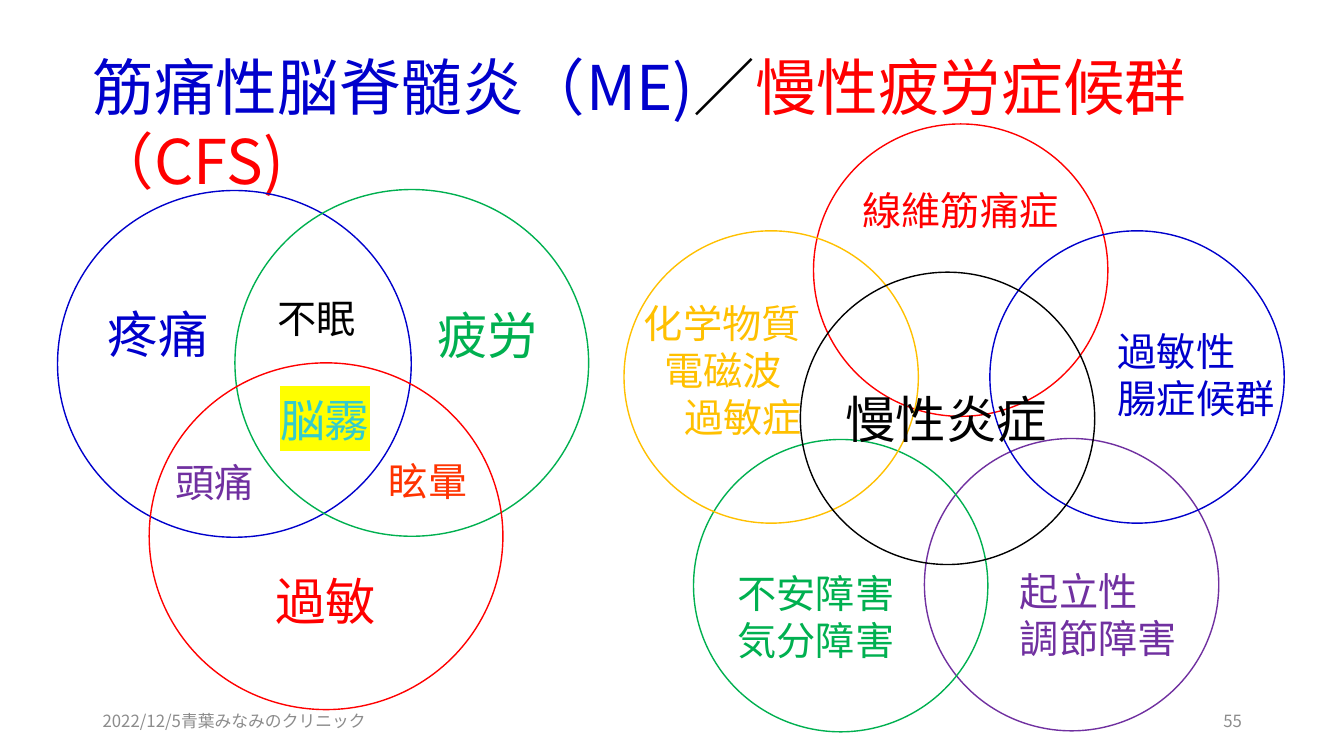
from pptx import Presentation
from pptx.dml.color import RGBColor
from pptx.enum.shapes import MSO_SHAPE
from pptx.enum.text import MSO_ANCHOR, MSO_AUTO_SIZE, PP_ALIGN
from pptx.oxml.ns import qn
from pptx.util import Inches, Pt
from lxml import etree

OVAL = MSO_SHAPE.OVAL
TOP = MSO_ANCHOR.TOP
LEFT, RIGHT = PP_ALIGN.LEFT, PP_ALIGN.RIGHT
NO_AUTOFIT = MSO_AUTO_SIZE.NONE

FONT = "Noto Sans CJK JP"
LINE_SPACING = 1.0
LINE_HEIGHT = 1.2  # height of a line as a multiple of the type size
SLIDE_WIDTH, SLIDE_HEIGHT = Inches(13.33), Inches(7.5)

BLUE, GREEN, RED, PURPLE = "0000CC", "00B050", "FF0000", "7030A0"
AMBER, ORANGE, TEAL, YELLOW = "FFC000", "FF3300", "33CCCC", "FFFF00"
BLACK, GREY = "000000", "8C8C8C"

TITLE = [("筋痛性脳脊髄炎（ME)", BLUE), ("／", BLACK), ("慢性疲労症候群（CFS)", RED)]

# Positions are percentages of the slide's width and height.
SYMPTOM_SIZE = (26.32, 45.87)
SYMPTOM_CIRCLES = [(4.28, 25.2, BLUE), (17.48, 25.07, GREEN), (11.1, 48, RED)]
SYMPTOM_LABELS = [
    (7.28, 39.47, "疼痛", 36, BLUE),
    (31.8, 39.6, "疲労", 36, GREEN),
    (19.73, 74.8, "過敏", 36, RED),
    (12.3, 60, "頭痛", 28, PURPLE),
    (28.2, 59.87, "眩暈", 28, ORANGE),
    (19.88, 38.27, "不眠", 28, BLACK),
]
DISEASE_SIZE = (21.9, 38.67)
DISEASE_CIRCLES = [
    (60.53, 16.4, RED),
    (68.78, 58, PURPLE),
    (51.6, 58.13, GREEN),
    (46.43, 30.53, AMBER),
    (73.65, 30.53, BLUE),
    (59.55, 36, BLACK),
]
DISEASE_LABELS = [
    (82.43, 42.67, "過敏性\n腸症候群", 28, BLUE),
    (63.45, 24, "線維筋痛症", 28, RED),
    (54.15, 74.67, "不安障害\n気分障害", 28, GREEN),
    (75.15, 74.4, "起立性\n調節障害", 28, PURPLE),
    (62.18, 50.67, "慢性炎症", 36, BLACK),
]


def across(percent):
    return int(SLIDE_WIDTH * percent / 100)


def down(percent):
    return int(SLIDE_HEIGHT * percent / 100)


def paint(color_format, color):
    color_format.rgb = RGBColor.from_string(color)


def format_span(span, size, color):
    span.font.size = Pt(size)
    span.font.name = FONT
    paint(span.font.color, color)
    etree.SubElement(span.font._element, qn("a:ea")).set("typeface", FONT)


def highlight(span, color):
    mark = etree.Element(qn("a:highlight"))
    etree.SubElement(mark, qn("a:srgbClr")).set("val", color)
    span.font._element.find(qn("a:latin")).addprevious(mark)


def add_circle(shapes, left, top, size, color):
    circle = shapes.add_shape(OVAL, across(left), down(top), across(size[0]), down(size[1]))
    circle.shadow.inherit = False
    circle.fill.background()
    circle.line.width = Pt(1)
    paint(circle.line.color, color)


def add_label(shapes, left, top, text, size, color, width=None, align=LEFT, indent=0):
    """Add a label as large as its full-width text; each line is indented one step more."""
    lines = text.split("\n")
    text_width = Pt(size * max(map(len, lines))) + Inches(0.2)
    height = Pt(size * LINE_HEIGHT * len(lines)) + Inches(0.1)
    box = shapes.add_textbox(across(left), down(top), across(width) if width else text_width, height)
    frame = box.text_frame
    frame.word_wrap = width is not None
    frame.text = text
    for step, para in enumerate(frame.paragraphs):
        para.alignment = align
        para.line_spacing = LINE_SPACING
        if indent and step:
            para._p.get_or_add_pPr().set("marL", str(Inches(indent * step)))
        for span in para.runs:
            format_span(span, size, color)
    return box


def add_venn(page, circles, size, labels):
    group = page.shapes.add_group_shape()
    for left, top, color in circles:
        add_circle(group.shapes, left, top, size, color)
    for label in labels:
        add_label(group.shapes, *label)
    return group


def fill_title(title):
    title.left, title.top = across(6.15), down(5.87)
    title.width, title.height = across(92.85), down(11.2)
    frame = title.text_frame
    frame.auto_size = NO_AUTOFIT
    frame.word_wrap = True
    frame.vertical_anchor = TOP
    para = frame.paragraphs[0]
    para.alignment = LEFT
    para.line_spacing = LINE_SPACING
    for text, color in TITLE:
        span = para.add_run()
        span.text = text
        format_span(span, 44, color)


def main():
    deck = Presentation()
    deck.slide_width, deck.slide_height = SLIDE_WIDTH, SLIDE_HEIGHT
    page = deck.slides.add_slide(deck.slide_layouts.get_by_name("Title Only"))
    fill_title(page.shapes.title)

    symptoms = add_venn(page, SYMPTOM_CIRCLES, SYMPTOM_SIZE, SYMPTOM_LABELS)
    brain_fog = add_label(symptoms.shapes, 20.1, 51.33, "脳霧", 32, TEAL)
    highlight(brain_fog.text_frame.paragraphs[0].runs[0], YELLOW)

    diseases = add_venn(page, DISEASE_CIRCLES, DISEASE_SIZE, DISEASE_LABELS)
    add_label(diseases.shapes, 47.18, 38.93, "化学物質\n電磁波\n過敏症", 28, AMBER, width=13.8, indent=0.2)

    add_label(page.shapes, 6.9, 93.33, "2022/12/5青葉みなみのクリニック", 12, GREY, width=22.5)
    add_label(page.shapes, 70.65, 93.33, "55", 12, GREY, width=22.5, align=RIGHT)
    deck.save("out.pptx")


if __name__ == "__main__":
    main()
